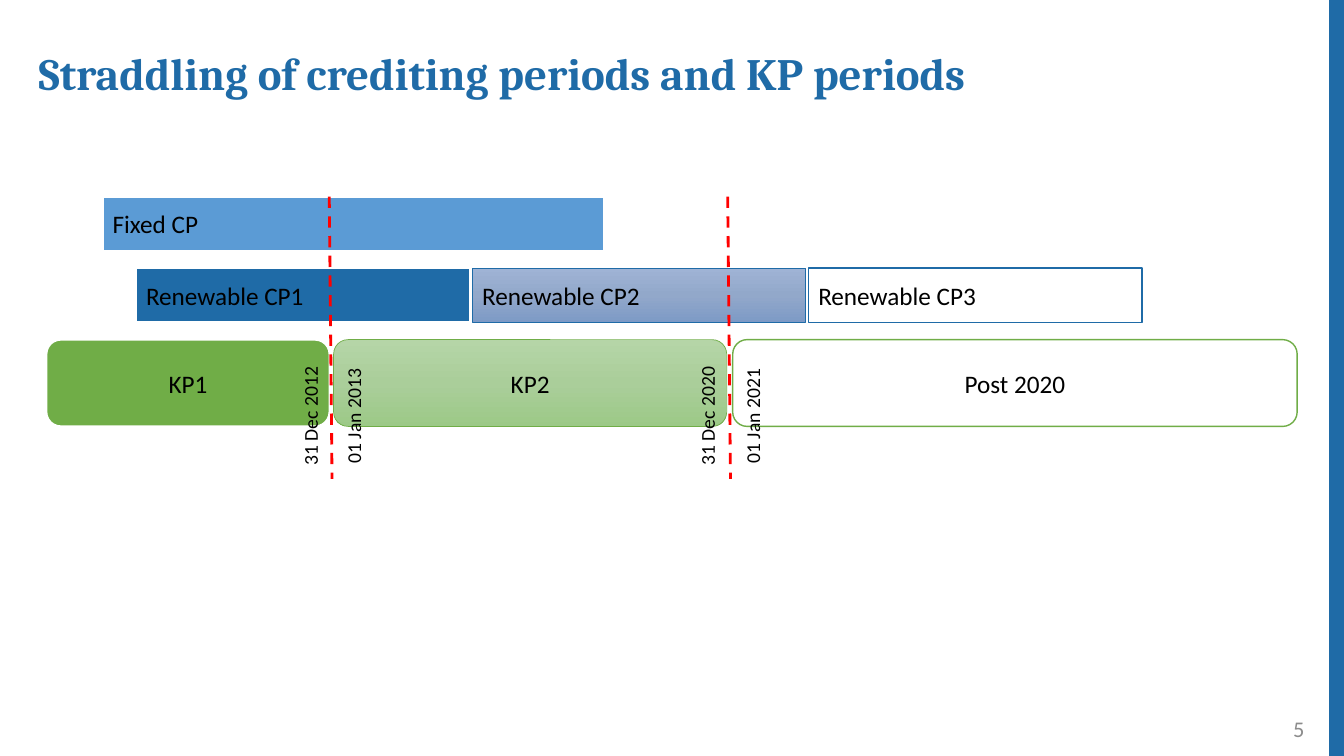
from copy import deepcopy
from dataclasses import dataclass

from lxml import etree
from pptx import Presentation
from pptx.dml.color import RGBColor
from pptx.enum.dml import MSO_LINE
from pptx.enum.shapes import MSO_CONNECTOR, MSO_SHAPE
from pptx.enum.text import MSO_ANCHOR, PP_ALIGN
from pptx.oxml.ns import qn
from pptx.util import Pt

STRAIGHT = MSO_CONNECTOR.STRAIGHT
DASH = MSO_LINE.DASH
RECT, ROUNDED = MSO_SHAPE.RECTANGLE, MSO_SHAPE.ROUNDED_RECTANGLE
TOP, MIDDLE = MSO_ANCHOR.TOP, MSO_ANCHOR.MIDDLE
LEFT, CENTER, RIGHT = PP_ALIGN.LEFT, PP_ALIGN.CENTER, PP_ALIGN.RIGHT

COLORS = {
    "navy": "1F6BA7", "sky": "5B9BD5", "green": "70AD47", "red": "FF0000",
    "white": "FFFFFF", "black": "000000", "grey": "8C8C8C",
    "pale_green": "B5D5A7", "mid_green": "AACE9A", "soft_green": "9CC987",
    "pale_blue": "9FB3D5", "mid_blue": "92A8CA", "soft_blue": "7D9AC6",
}
GREEN_FADE = ("pale_green", "mid_green", "soft_green")
BLUE_FADE = ("pale_blue", "mid_blue", "soft_blue")

KP_TOP, KP_HEIGHT = 242.6, 62
CP_HEIGHT = 38.9
FIXED_TOP, RENEWABLE_TOP = 140.4, 191.5
RENEWABLE_LEFT, RENEWABLE_WIDTH, RENEWABLE_PITCH = 97.2, 238.3, 240.1
DATE_TOP, DATE_WIDTH, DATE_HEIGHT = 246.2, 28.1, 102.2
CUTOFF_BOTTOM = 342


@dataclass
class Period:
    label: str
    left: float
    top: float
    width: float
    height: float
    fills: tuple[str, ...]
    border: str
    border_width: float
    rounded: bool = False


@dataclass
class Label:
    text: str
    left: float
    top: float
    width: float
    height: float
    size: float
    color: str = "black"
    font: str = "Calibri"
    bold: bool = False
    align: PP_ALIGN = LEFT
    anchor: MSO_ANCHOR = MIDDLE
    upright: bool = False
    spacing: float = 1.0


@dataclass
class Rule:
    start: tuple[float, float]
    end: tuple[float, float]
    color: str
    width: float
    dashed: bool = False


def rgb(name: str) -> RGBColor:
    return RGBColor.from_string(COLORS[name])


def paint(shape, fills: tuple[str, ...]) -> None:
    """One colour fills solid; three make a fade from top to bottom."""
    fill = shape.fill
    if len(fills) == 1:
        fill.solid()
        fill.fore_color.rgb = rgb(fills[0])
        return
    fill.gradient()
    fill.gradient_angle = 270
    stop_list = shape._element.spPr.find(qn("a:gradFill")).find(qn("a:gsLst"))
    stop_list.insert(1, deepcopy(stop_list[0]))
    for index, (stop, name) in enumerate(zip(fill.gradient_stops, fills)):
        stop.position = index / (len(fills) - 1)
        stop.color.rgb = rgb(name)


def write(frame, label: Label) -> None:
    frame.word_wrap = True
    frame.vertical_anchor = label.anchor
    paragraph = frame.paragraphs[0]
    paragraph.text = label.text
    paragraph.alignment = label.align
    paragraph.line_spacing = label.spacing
    font = paragraph.font
    font.name, font.size, font.bold = label.font, Pt(label.size), label.bold
    font.color.rgb = rgb(label.color)


def box(item: Period | Label) -> tuple[Pt, ...]:
    return Pt(item.left), Pt(item.top), Pt(item.width), Pt(item.height)


def draw_period(slide, period: Period) -> None:
    bar = slide.shapes.add_shape(ROUNDED if period.rounded else RECT, *box(period))
    bar.shadow.inherit = False
    paint(bar, period.fills)
    bar.line.color.rgb = rgb(period.border)
    bar.line.width = Pt(period.border_width)
    write(bar.text_frame, Label(period.label, *box(period), size=18,
                                align=CENTER if period.rounded else LEFT))


def draw_label(slide, label: Label) -> None:
    frame = slide.shapes.add_textbox(*box(label)).text_frame
    write(frame, label)
    if label.upright:
        frame._txBody.bodyPr.set("vert", "vert270")


def draw_rule(slide, rule: Rule) -> None:
    line = slide.shapes.add_connector(
        STRAIGHT, *(Pt(value) for value in rule.start + rule.end))
    line.line.color.rgb = rgb(rule.color)
    line.line.width = Pt(rule.width)
    if rule.dashed:
        line.line.dash_style = DASH
    etree.SubElement(line._element.spPr, qn("a:effectLst"))


KYOTO_PERIODS = [
    Period("KP1", 33.1, KP_TOP, 202.3, KP_HEIGHT, ("green",), "white", 1.5, True),
    Period("KP2", 238.3, KP_TOP, 280.8, KP_HEIGHT, GREEN_FADE, "green", 0.5, True),
    Period("Post 2020", 523.4, KP_TOP, 403.2, KP_HEIGHT, ("white",), "green", 1, True),
]
DATES = [
    Label(text, left, DATE_TOP, DATE_WIDTH, DATE_HEIGHT, 14, align=CENTER, upright=True)
    for text, left in [("31 Dec 2012", 207.4), ("01 Jan 2013", 238.3),
                       ("31 Dec 2020", 491), ("01 Jan 2021", 523.4)]
]
RENEWABLE_STYLES = [(("navy",), "white", 1.5), (BLUE_FADE, "navy", 0.5),
                    (("white",), "navy", 1)]
CREDITING_PERIODS = [
    Period(f"Renewable CP{number + 1}", RENEWABLE_LEFT + number * RENEWABLE_PITCH,
           RENEWABLE_TOP, RENEWABLE_WIDTH, CP_HEIGHT, *style)
    for number, style in enumerate(RENEWABLE_STYLES)
] + [Period("Fixed CP", 73.4, FIXED_TOP, 357.8, CP_HEIGHT, ("sky",), "white", 1.5)]
CUTOFFS = [
    Rule((left, FIXED_TOP), (left + 2, CUTOFF_BOTTOM), "red", 2, True)
    for left in (235.2, 519.8)
]


def main() -> None:
    presentation = Presentation()
    presentation.slide_width, presentation.slide_height = Pt(960), Pt(540)
    slide = presentation.slides.add_slide(presentation.slide_layouts[6])

    # Side band, title and page number
    draw_rule(slide, Rule((955.4, 0), (955.4, 540), "navy", 12))
    draw_label(slide, Label("Straddling of crediting periods and KP periods",
                            20.5, 33.1, 861, 41.8, 32, "navy", "Cambria", True,
                            anchor=TOP, spacing=0.9))
    draw_label(slide, Label("5", 722.9, 506.2, 216, 28.8, 16, "grey", align=RIGHT))

    # Timeline, from back to front
    for period in KYOTO_PERIODS:
        draw_period(slide, period)
    for date in DATES:
        draw_label(slide, date)
    for period in CREDITING_PERIODS:
        draw_period(slide, period)
    for cutoff in CUTOFFS:
        draw_rule(slide, cutoff)

    presentation.save("out.pptx")


if __name__ == "__main__":
    main()
